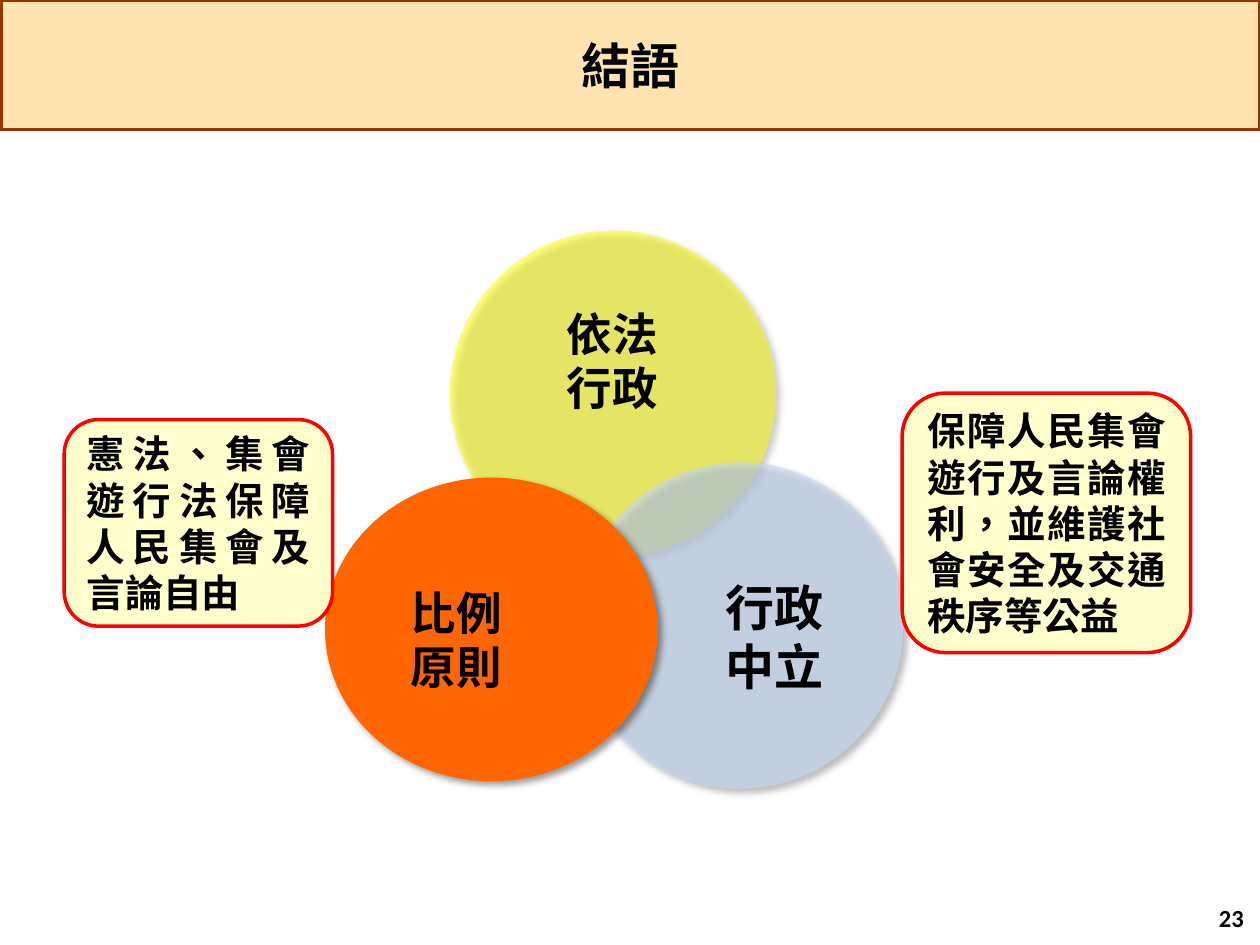
import dataclasses

import lxml.etree
import pptx
import pptx.dml.color
import pptx.enum.shapes
import pptx.enum.text
import pptx.oxml.ns
import pptx.util

COLS, ROWS = 100, 75
SHAPE = pptx.enum.shapes.MSO_SHAPE
ALIGN = pptx.enum.text.PP_ALIGN
QN = pptx.oxml.ns.qn


@dataclasses.dataclass(frozen=True)
class Theme:
    """Colours, fonts and type sizes of the slide."""
    ink: str = "000000"
    banner: str = "FFE4AF"
    banner_edge: str = "993300"
    note: str = "FFFFCC"
    note_edge: str = "FF0000"
    yellow: str = "FFFF00"
    blue: str = "C6D9F1"
    orange: str = "FF6600"
    cjk: str = "Noto Sans CJK SC"
    latin: str = "Calibri"
    title: int = 28
    circle: int = 26
    body: int = 22
    number: int = 14
    edge: int = 2
    leading: float = 1.2


THEME = Theme()


def rgb(value):
    """Turn a hex string into a colour."""
    return pptx.dml.color.RGBColor.from_string(value)


def box(prs, col, row, cols, rows):
    """Convert grid columns and rows into left, top, width and height."""
    dx, dy = prs.slide_width / COLS, prs.slide_height / ROWS
    return [round(v) for v in (col * dx, row * dy, cols * dx, rows * dy)]


def write(sp, lines, size, align=ALIGN.CENTER, font=THEME.cjk, inset=None):
    """Fill a shape with bold paragraphs, centred vertically."""
    tf = sp.text_frame
    tf.word_wrap = True
    tf.auto_size = pptx.enum.text.MSO_AUTO_SIZE.NONE
    tf.vertical_anchor = pptx.enum.text.MSO_ANCHOR.MIDDLE
    if inset is not None:
        tf.margin_left = tf.margin_top = tf.margin_right = tf.margin_bottom = inset
    tf.text = "\n".join(lines)
    for p in tf.paragraphs:
        p.alignment = align
        p.line_spacing = pptx.util.Pt(size * THEME.leading)
        p.font.size, p.font.bold, p.font.name = pptx.util.Pt(size), True, font
        p.font.color.rgb = rgb(THEME.ink)
        props = p._p.pPr.find(QN("a:defRPr"))
        props.set("lang", "zh-TW")
        lxml.etree.SubElement(props, QN("a:ea"), typeface=font)


def paint(sp, fill, edge=None):
    """Give a shape its fill and outline."""
    sp.fill.solid()
    sp.fill.fore_color.rgb = rgb(fill)
    if edge:
        sp.line.color.rgb = rgb(edge)
        sp.line.width = pptx.util.Pt(THEME.edge)
    else:
        sp.line.fill.background()


def set_alpha(color, percent):
    """Set the opacity of an a:srgbClr element."""
    lxml.etree.SubElement(color, QN("a:alpha"), val=str(percent * 1000))


def add_shadow(sp):
    """Cast a soft shadow to the lower right."""
    sp.shadow.inherit = False
    effects = sp._element.spPr.find(QN("a:effectLst"))
    outer = lxml.etree.SubElement(
        effects, QN("a:outerShdw"), blurRad=str(pptx.util.Pt(4)),
        dist=str(pptx.util.Pt(3)), dir=str(45 * 60000), rotWithShape="0")
    set_alpha(lxml.etree.SubElement(outer, QN("a:srgbClr"), val=THEME.ink), 40)


def add_title(prs, s, text):
    """Turn the title placeholder into a banner."""
    sp = s.shapes.title
    sp.left, sp.top, sp.width, sp.height = box(prs, 0.1, 0, 99.9, 10.3)
    paint(sp, THEME.banner, THEME.banner_edge)
    write(sp, [text], THEME.title)


def add_label(prs, s, cell, lines, size, **style):
    """Place a text box on the grid."""
    write(s.shapes.add_textbox(*box(prs, *cell)), lines, size, **style)


def add_circle(prs, s, cell, fill, opacity, label_cell, lines, size):
    """Draw one circle of the Venn diagram with its label."""
    sp = s.shapes.add_shape(SHAPE.OVAL, *box(prs, *cell))
    paint(sp, fill)
    if opacity < 100:
        set_alpha(sp._element.spPr.find(QN("a:solidFill"))[0], opacity)
    add_shadow(sp)
    add_label(prs, s, label_cell, lines, size, inset=0)


def add_note(prs, s, cell, text):
    """Draw a rounded note with justified text."""
    sp = s.shapes.add_shape(SHAPE.ROUNDED_RECTANGLE, *box(prs, *cell))
    sp.shadow.inherit = False
    paint(sp, THEME.note, THEME.note_edge)
    write(sp, [text], THEME.body, align=ALIGN.JUSTIFY)


def main():
    """Build the closing slide."""
    prs = pptx.Presentation()
    prs.slide_width, prs.slide_height = pptx.util.Inches(10), pptx.util.Inches(7.5)
    s = prs.slides.add_slide(prs.slide_layouts[5])
    add_title(prs, s, "結語")
    add_label(prs, s, (77.2, 70.8, 22.5, 4), ["23"], THEME.number,
              align=ALIGN.RIGHT, font=THEME.latin)
    circles = [
        ((35.7, 18.3, 25.9, 25.9), THEME.yellow, 50,
         (39.1, 22.8, 19, 11.6), ["依法", "行政"], THEME.circle),
        ((45.8, 36.7, 25.9, 25.9), THEME.blue, 65,
         (53.7, 43.4, 15.5, 14.2), ["行政", "中立"], THEME.title),
        ((25.8, 37.9, 26.4, 24.1), THEME.orange, 100,
         (28.3, 44.1, 15.8, 13.3), ["比例\v原則"], THEME.circle),
    ]
    for circle in circles:
        add_circle(prs, s, *circle)
    add_note(prs, s, (5.1, 33.3, 21.3, 16.4), "憲法、集會遊行法保障人民集會及言論自由")
    add_note(prs, s, (71.6, 31.2, 22.9, 20.6),
             "保障人民集會遊行及言論權利，並維護社會安全及交通秩序等公益")
    prs.save("out.pptx")


if __name__ == "__main__":
    main()
